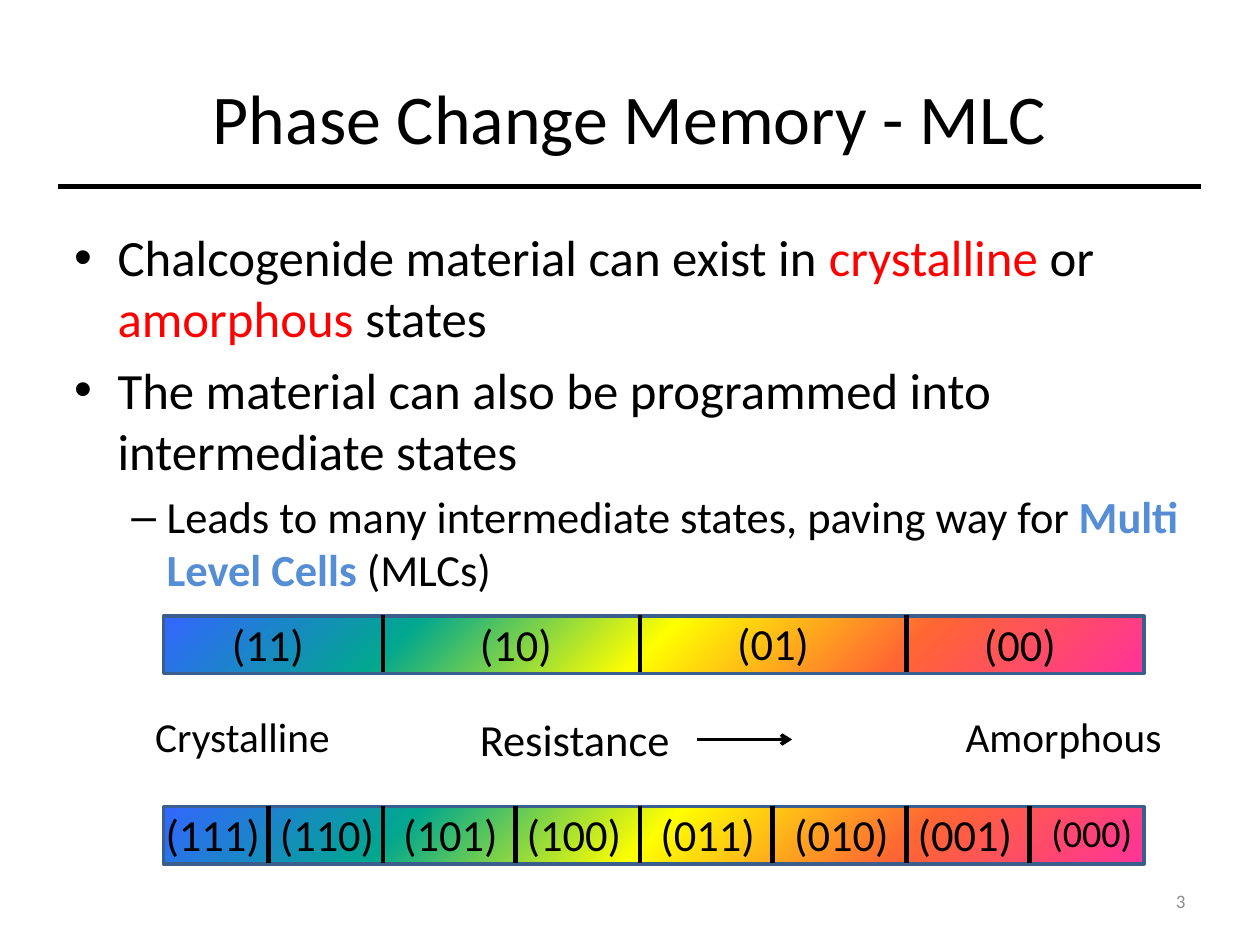
from pptx import Presentation
from pptx.dml.color import RGBColor
from pptx.enum.shapes import MSO_CONNECTOR, MSO_SHAPE
from pptx.enum.text import MSO_ANCHOR, MSO_AUTO_SIZE, PP_ALIGN
from pptx.oxml import parse_xml
from pptx.oxml.ns import nsdecls, qn
from pptx.util import Inches, Pt
from lxml import etree

RECT = MSO_SHAPE.RECTANGLE
STRAIGHT = MSO_CONNECTOR.STRAIGHT
TOP, MIDDLE = MSO_ANCHOR.TOP, MSO_ANCHOR.MIDDLE
LEFT, CENTER, RIGHT = PP_ALIGN.LEFT, PP_ALIGN.CENTER, PP_ALIGN.RIGHT
FIT, FIXED = MSO_AUTO_SIZE.SHAPE_TO_FIT_TEXT, MSO_AUTO_SIZE.NONE

CM = 1 / 2.54  # inches in a centimetre
FONT = "Calibri"
BLACK, RED, BLUE, GRAY = "000000", "FF0000", "558ED5", "8C8C8C"
STOPS = [(0, "FF3399"), (25, "FF6633"), (50, "FFFF00"),
         (75, "01A78F"), (100, "3366FF")]

# Each point: bullet, size, indent, hang, space before, runs of (text, colour, bold)
POINTS = [
    ("•", 32, 0.38, 0.38, 0, [
        ("Chalcogenide material can exist in ", BLACK, False),
        ("crystalline", RED, False), (" or ", BLACK, False),
        ("amorphous", RED, False), (" states", BLACK, False)]),
    ("•", 32, 0.38, 0.38, 6.4, [
        ("The material can also be programmed into intermediate states",
         BLACK, False)]),
    ("–", 28, 0.81, 0.31, 5.6, [
        ("Leads to many intermediate states, paving way for ", BLACK, False),
        ("Multi Level Cells", BLUE, True), (" (MLCs)", BLACK, False)]),
]

# Each label: text, left, top offset from the bar, size
PAIRS = [("(11)", 1.93, 0, 28), ("(10)", 4.1, 0, 28),
         ("(01)", 6.35, -0.01, 28), ("(00)", 8.51, 0, 28)]
TRIPLES = [("(111)", 1.35, -0.01, 28), ("(110)", 2.35, -0.01, 28),
           ("(101)", 3.43, -0.01, 28), ("(100)", 4.51, -0.01, 28),
           ("(011)", 5.68, -0.01, 28), ("(010)", 6.85, -0.01, 28),
           ("(001)", 7.93, -0.01, 28), ("(000)", 9.1, 0.01, 24)]


def color(code):
    return RGBColor.from_string(code)


def add_run(para, text, size, code=BLACK, bold=False):
    run = para.add_run()
    run.text = text
    font = run.font
    font.name, font.size, font.bold = FONT, Pt(size), bold
    font.color.rgb = color(code)


def add_box(slide, left, top, width, height, anchor=TOP, fit=FIXED):
    box = slide.shapes.add_textbox(
        Inches(left), Inches(top), Inches(width), Inches(height))
    frame = box.text_frame
    frame.word_wrap = True
    frame.auto_size = fit
    frame.vertical_anchor = anchor
    return frame


def add_text(slide, text, left, top, width, height=0.54, size=28,
             code=BLACK, align=LEFT, anchor=TOP, fit=FIT, spacing=0.93):
    frame = add_box(slide, left, top, width, height, anchor, fit)
    para = frame.paragraphs[0]
    para.alignment = align
    para.line_spacing = spacing
    add_run(para, text, size, code)


def add_line(slide, x1, y1, x2, y2, width=3, arrow=False):
    line = slide.shapes.add_connector(
        STRAIGHT, Inches(x1), Inches(y1), Inches(x2), Inches(y2))
    line.line.width = Pt(width)
    line.line.color.rgb = color(BLACK)
    props = line._element.spPr
    if arrow:
        etree.SubElement(props.find(qn("a:ln")), qn("a:tailEnd"), type="arrow")
    etree.SubElement(props, qn("a:effectLst"))


def add_title(slide, text):
    title = slide.shapes.title
    title.left, title.top = Inches(0.55), Inches(0.33)
    title.width, title.height = Inches(9.92), Inches(1.38)
    frame = title.text_frame
    frame.vertical_anchor = MIDDLE
    para = frame.paragraphs[0]
    para.alignment = CENTER
    add_run(para, text, 44)


def add_points(slide):
    frame = add_box(slide, 0.55, 1.93, 9.92, 5.46)
    for i, (mark, size, indent, hang, before, runs) in enumerate(POINTS):
        para = frame.add_paragraph() if i else frame.paragraphs[0]
        props = para._p.get_or_add_pPr()
        props.set("marL", str(Inches(indent)))
        props.set("indent", str(-Inches(hang)))
        etree.SubElement(props, qn("a:buFont"), typeface="Arial")
        etree.SubElement(props, qn("a:buChar"), char=mark)
        para.space_before = Pt(before)
        for text, code, bold in runs:
            add_run(para, text, size, code, bold)


def fill_rainbow(shape):
    """Fill with a circular gradient centred on the bottom right corner."""
    stops = "".join(
        f'<a:gs pos="{pos * 1000}"><a:srgbClr val="{code}"/></a:gs>'
        for pos, code in STOPS)
    rainbow = parse_xml(
        f'<a:gradFill {nsdecls("a")} rotWithShape="1"><a:gsLst>{stops}</a:gsLst>'
        '<a:path path="circle"><a:fillToRect l="100000" t="100000"/></a:path>'
        '</a:gradFill>')
    shape.fill.gradient()
    props = shape._element.spPr
    props.replace(props.find(qn("a:gradFill")), rainbow)


def add_bar(slide, top, cuts, labels, width):
    """Draw a resistance range, split at the cuts into labelled levels."""
    bar = slide.shapes.add_shape(
        RECT, Inches(1.43), Inches(top), Inches(8.58), Inches(0.5))
    bar.shadow.inherit = False
    fill_rainbow(bar)
    bar.line.color.rgb = color("3A5F8C")
    bar.line.width = Pt(2)
    for x in cuts:
        add_line(slide, x, top - 0.01, x, top + 0.49)
    for text, left, shift, size in labels:
        add_text(slide, text, left, top + shift, width, size=size)


def main():
    prs = Presentation()
    prs.slide_width, prs.slide_height = Inches(28 * CM), Inches(21 * CM)
    slide = prs.slides.add_slide(prs.slide_layouts[5])
    add_line(slide, 0.51, 1.63, 10.51, 1.63)
    add_title(slide, "Phase Change Memory - MLC")
    add_points(slide)
    add_bar(slide, 5.39, [3.35, 5.6, 7.93], PAIRS, 0.92)
    add_text(slide, "Crystalline", 1.26, 6.21, 1.92, 0.51, size=26)
    add_text(slide, "Resistance", 4.1, 6.22, 2.5)
    add_line(slide, 6.1, 6.47, 6.93, 6.47, width=2.25, arrow=True)
    add_text(slide, "Amorphous", 8.35, 6.21, 2.17, 0.51, size=26)
    add_bar(slide, 7.06, [2.35, 3.35, 4.51, 5.6, 6.76, 7.93, 9.01],
            TRIPLES, 1.1)
    add_text(slide, "3", 7.9, 7.66, 2.57, 0.44, size=12, code=GRAY,
             align=RIGHT, anchor=MIDDLE, fit=FIXED, spacing=1.0)
    prs.save("out.pptx")


if __name__ == "__main__":
    main()
